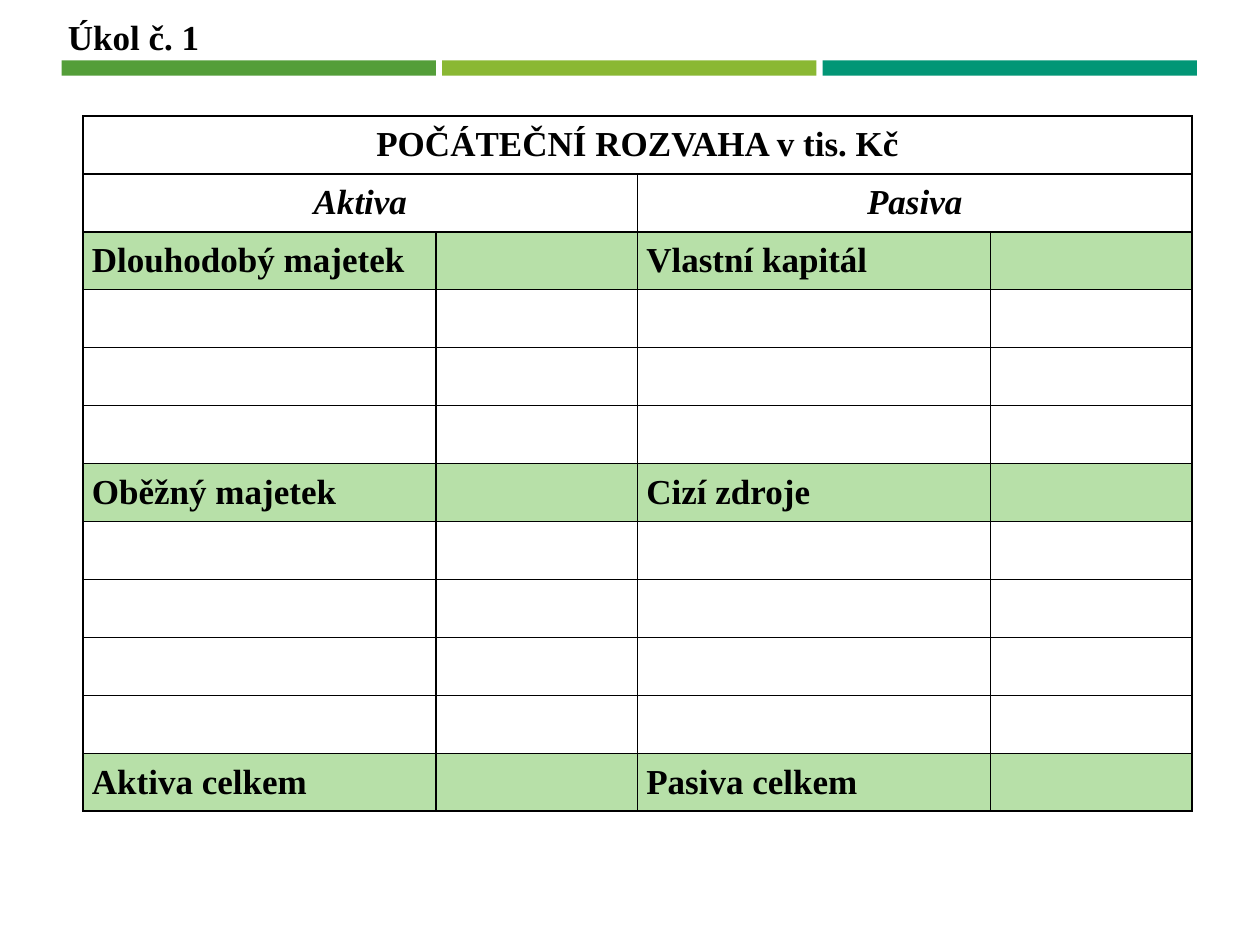
from lxml import etree
from pptx import Presentation
from pptx import util as u
from pptx.dml.color import RGBColor
from pptx.enum import shapes, text
from pptx.oxml import ns

SCALE = 9144
BLACK, WHITE, GREEN = "000000", "FFFFFF", "B7E0A8"


def paint(fill, color):
    fill.solid()
    fill.fore_color.rgb = RGBColor.from_string(color)


def write(frame, words, italic=False, align=text.PP_ALIGN.LEFT):
    para = frame.paragraphs[0]
    para.alignment = align
    run = para.add_run()
    run.text = words
    font = run.font
    font.name, font.size = "Times New Roman", u.Pt(20)
    font.bold, font.italic = True, italic
    paint(font.fill, BLACK)


deck = Presentation()
deck.slide_width, deck.slide_height = 1000 * SCALE, 750 * SCALE
slide = deck.slides.add_slide(deck.slide_layouts[6])

for i, color in enumerate(["549E39", "8AB833", "029676"]):
    bar = slide.shapes.add_shape(
        shapes.MSO_SHAPE.RECTANGLE,
        *[n * SCALE for n in (49 + i * 302, 48, 297, 12)])
    bar.shadow.inherit = False
    paint(bar.fill, color)
    bar.line.fill.background()

title = slide.shapes.add_textbox(*[n * SCALE for n in (44, 7, 125, 44)])
title.text_frame.word_wrap = False
title.text_frame.auto_size = text.MSO_AUTO_SIZE.SHAPE_TO_FIT_TEXT
write(title.text_frame, "Úkol č. 1")

heads = {
    2: ("Dlouhodobý majetek", "Vlastní kapitál"),
    6: ("Oběžný majetek", "Cizí zdroje"),
    11: ("Aktiva celkem", "Pasiva celkem"),
}
table = slide.shapes.add_table(
    12, 4, *[n * SCALE for n in (66, 92, 880, 552)]).table
table.first_row = table.horz_banding = False
for col, wide in zip(table.columns, (280, 160, 280, 160)):
    col.width = wide * SCALE

for r, row in enumerate(table.rows):
    row.height = 46 * SCALE
    for cell in row.cells:
        cell.margin_left = cell.margin_right = 7 * SCALE
        cell.margin_top = cell.margin_bottom = 0
        cell.vertical_anchor = text.MSO_ANCHOR.MIDDLE
        props = cell._tc.get_or_add_tcPr()
        for side in "LRTB":
            line = etree.SubElement(props, ns.qn(f"a:ln{side}"), w="12700")
            ink = etree.SubElement(line, ns.qn("a:solidFill"))
            etree.SubElement(ink, ns.qn("a:srgbClr"), val=BLACK)
        paint(cell.fill, GREEN if r in heads else WHITE)

mid = text.PP_ALIGN.CENTER
table.cell(0, 0).merge(table.cell(0, 3))
write(table.cell(0, 0).text_frame, "POČÁTEČNÍ ROZVAHA v tis. Kč", align=mid)
for c, name in ((0, "Aktiva"), (2, "Pasiva")):
    table.cell(1, c).merge(table.cell(1, c + 1))
    write(table.cell(1, c).text_frame, name, italic=True, align=mid)
for r, names in heads.items():
    for c, name in zip((0, 2), names):
        write(table.cell(r, c).text_frame, name)

deck.save("out.pptx")
